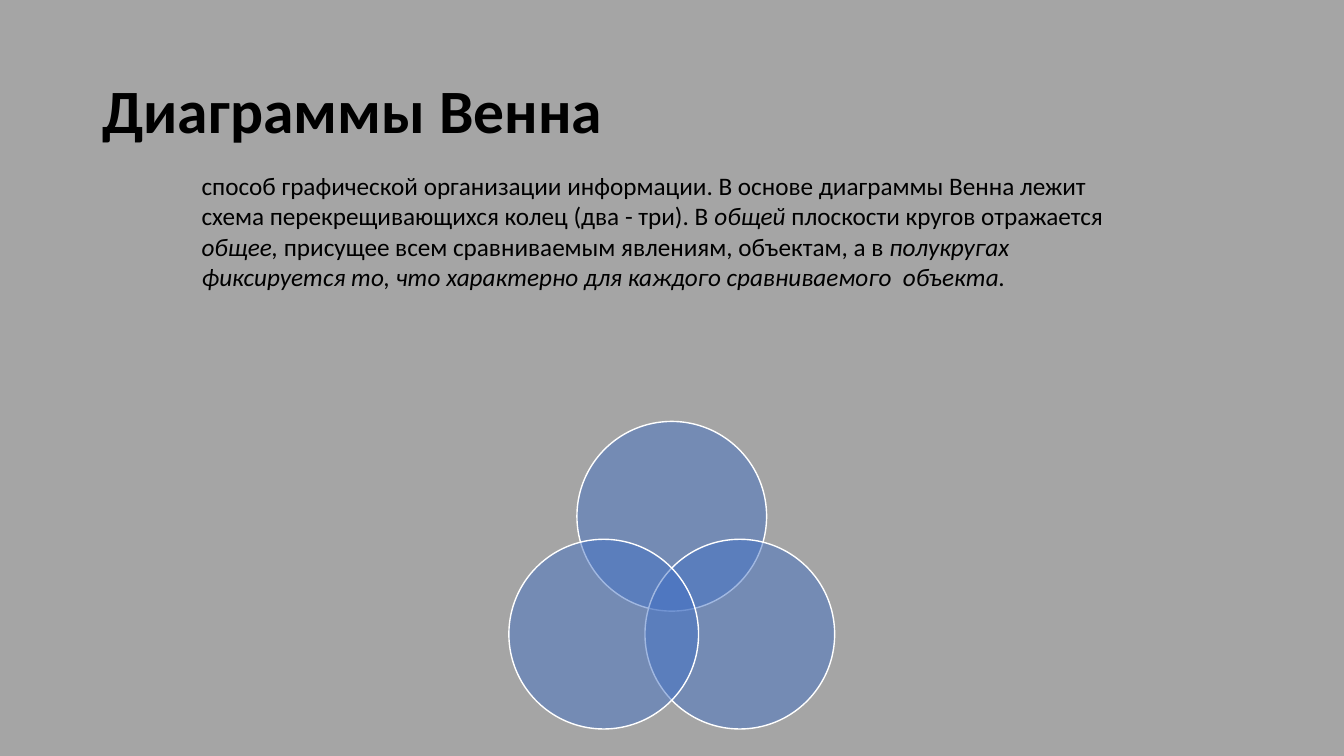
from math import cos, radians, sin

from lxml import etree
from pptx import Presentation
from pptx.dml.color import RGBColor
from pptx.enum.shapes import MSO_SHAPE
from pptx.enum.text import MSO_ANCHOR
from pptx.oxml.ns import qn
from pptx.util import Cm, Pt

OVAL = MSO_SHAPE.OVAL
MIDDLE, TOP = MSO_ANCHOR.MIDDLE, MSO_ANCHOR.TOP

GRAY = RGBColor(0xA5, 0xA5, 0xA5)
BLUE = RGBColor(0x44, 0x72, 0xC4)
WHITE = RGBColor(0xFF, 0xFF, 0xFF)
BLACK = RGBColor(0x00, 0x00, 0x00)
FONT = "Calibri"

TITLE = [("Диаграммы Венна", False)]
DEFINITION = [
    ("способ графической организации информации. В основе диаграммы Венна лежит "
     "схема перекрещивающихся колец (два - три). В ", False),
    ("общей ", True),
    ("плоскости кругов отражается ", False),
    ("oбщее, ", True),
    ("присущее всем сравниваемым явлениям, объектам, а в ", False),
    ("полукругах фиксируется то, что характерно для каждого сравниваемого  объекта.", True),
]

VENN_CENTER = (16.93, 14.99)
VENN_RADIUS = 1.98
CIRCLE_DIAMETER = 4.78
CIRCLE_ANGLES = (-90, 30, 150)
CIRCLE_OPACITY = 50


def add_text(slide, box, runs, size, anchor, bold=False, line_spacing=1.0):
    frame = slide.shapes.add_textbox(*map(Cm, box)).text_frame
    frame.word_wrap = True
    frame.vertical_anchor = anchor
    paragraph = frame.paragraphs[0]
    paragraph.line_spacing = line_spacing
    paragraph.font.name = FONT
    paragraph.font.size = Pt(size)
    paragraph.font.bold = bold
    paragraph.font.color.rgb = BLACK
    for text, italic in runs:
        run = paragraph.add_run()
        run.text = text
        run.font.italic = italic


def add_circle(shapes, angle):
    left = VENN_CENTER[0] + VENN_RADIUS * cos(radians(angle)) - CIRCLE_DIAMETER / 2
    top = VENN_CENTER[1] + VENN_RADIUS * sin(radians(angle)) - CIRCLE_DIAMETER / 2
    circle = shapes.add_shape(
        OVAL, Cm(left), Cm(top), Cm(CIRCLE_DIAMETER), Cm(CIRCLE_DIAMETER))
    circle.shadow.inherit = False
    circle.fill.solid()
    circle.fill.fore_color.rgb = BLUE
    color = circle._element.spPr.find(qn("a:solidFill")).find(qn("a:srgbClr"))
    etree.SubElement(color, qn("a:alpha")).set("val", str(CIRCLE_OPACITY * 1000))
    circle.line.color.rgb = WHITE
    circle.line.width = Pt(1)


def main():
    deck = Presentation()
    deck.slide_width, deck.slide_height = Cm(33.87), Cm(19.05)
    slide = deck.slides.add_slide(deck.slide_layouts[6])
    slide.background.fill.solid()
    slide.background.fill.fore_color.rgb = GRAY

    add_text(slide, (2.33, 1.01, 29.21, 3.68), TITLE, 44, MIDDLE,
             bold=True, line_spacing=0.9)
    venn = slide.shapes.add_group_shape()
    for angle in CIRCLE_ANGLES:
        add_circle(venn.shapes, angle)
    add_text(slide, (4.83, 4.17, 24.2, 3.33), DEFINITION, 18, TOP)
    deck.save("out.pptx")


if __name__ == "__main__":
    main()
